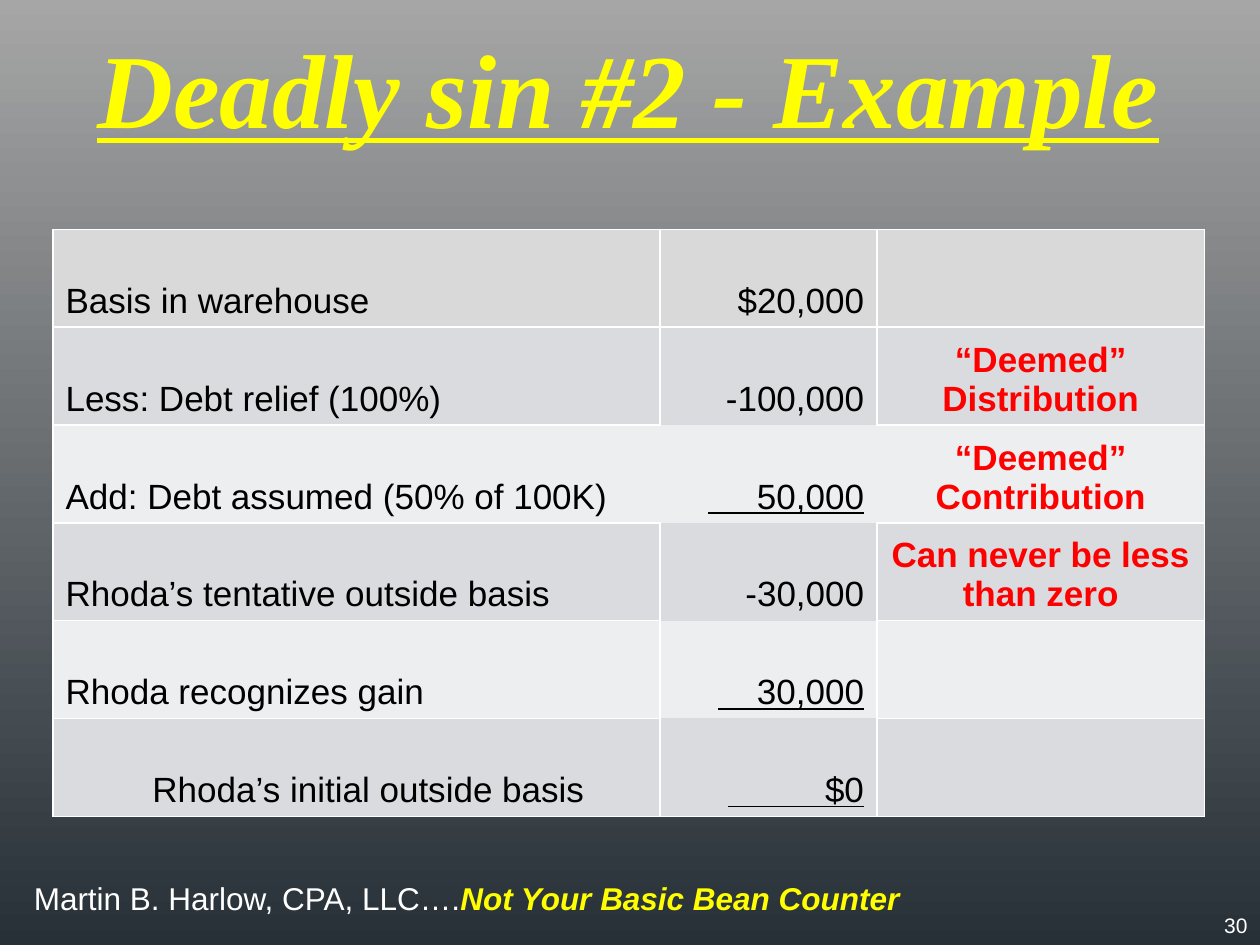
from lxml.etree import SubElement
from pptx import Presentation
from pptx.dml.color import RGBColor
from pptx.enum.text import MSO_ANCHOR, PP_ALIGN
from pptx.oxml.ns import qn
from pptx.util import Inches, Pt

WHITE = RGBColor(0xFF, 0xFF, 0xFF)
BLACK = RGBColor(0, 0, 0)
YELLOW = RGBColor(0xFF, 0xFF, 0)
RED = RGBColor(0xFF, 0, 0)
BG_TOP = RGBColor(0xA6, 0xA6, 0xA6)
BG_BOTTOM = RGBColor(0x27, 0x30, 0x37)
FIRST_ROW = RGBColor(0xD9, 0xD9, 0xD9)
BANDS = (RGBColor(0xED, 0xEE, 0xEF), RGBColor(0xD9, 0xDB, 0xDE))

COL_WIDTHS = (4.82, 1.72, 2.6)
ROW_HEIGHT = 4.66 / 6
ALIGNS = (PP_ALIGN.LEFT, PP_ALIGN.RIGHT, PP_ALIGN.CENTER)
AMOUNT_COL = 1
OPEN_ROW = 2  # row without inner vertical lines

# label, amount, remark, width in characters of the ruled amount (0 = not ruled)
ROWS = (
    ("Basis in warehouse", "$20,000", "", 0),
    ("Less: Debt relief (100%)", "-100,000", "“Deemed” Distribution", 0),
    ("Add: Debt assumed (50% of 100K)", "50,000", "“Deemed” Contribution", 11),
    ("Rhoda’s tentative outside basis", "-30,000", "Can never be less than zero", 0),
    ("Rhoda recognizes gain", "30,000", "", 10),
    ("Rhoda’s initial outside basis", "$0", "", 12),
)


def style(font, size, color, name="Arial", bold=False, italic=False, underline=False):
    font.size, font.name = Pt(size), name
    font.color.rgb = color
    font.bold, font.italic, font.underline = bold, italic, underline


def paint_background(s):
    fill = s.background.fill
    fill.gradient()
    fill.gradient_angle = 270
    for stop, color, position in zip(fill.gradient_stops, (BG_TOP, BG_BOTTOM), (0, 1)):
        stop.color.rgb = color
        stop.position = position


def add_title(s, text):
    title = s.shapes.title
    title.left, title.top = Inches(0.4), Inches(0.14)
    title.width, title.height = Inches(9.17), Inches(1.11)
    tf = title.text_frame
    tf.text = text
    tf.vertical_anchor = MSO_ANCHOR.TOP
    p = tf.paragraphs[0]
    p.alignment = PP_ALIGN.CENTER
    style(p.font, 60, YELLOW, "Times New Roman", bold=True, italic=True, underline=True)


def add_text_box(s, left, top, width, height):
    """Return the paragraph of a new wrapping text box."""
    tf = s.shapes.add_textbox(*map(Inches, (left, top, width, height))).text_frame
    tf.word_wrap = True
    return tf.paragraphs[0]


def add_footer(s):
    p = add_text_box(s, 0.17, 6.93, 7.59, 0.4)
    for text, color, strong in (("Martin B. Harlow, CPA, LLC….", WHITE, False),
                                ("Not Your Basic Bean Counter", YELLOW, True)):
        r = p.add_run()
        r.text = text
        style(r.font, 18, color, bold=strong, italic=strong)


def add_page_number(s, number):
    p = add_text_box(s, 8.97, 7.19, 1.03, 0.33)
    p.text = number
    p.alignment = PP_ALIGN.RIGHT
    style(p.font, 12, WHITE)


def visible_sides(row, col):
    """Amounts below the first row are open upwards and downwards."""
    sides = set("LRTB")
    if col == AMOUNT_COL and row > 0:
        if row > 1:
            sides.discard("T")
        if row < len(ROWS) - 1:
            sides.discard("B")
    if row == OPEN_ROW:
        if col >= AMOUNT_COL:
            sides.discard("L")
        if col <= AMOUNT_COL:
            sides.discard("R")
    return sides


def set_borders(cell, sides):
    """Call before the cell is filled: lines precede the fill in tcPr."""
    tcPr = cell._tc.get_or_add_tcPr()
    for side in "LRTB":
        ln = SubElement(tcPr, qn(f"a:ln{side}"), w=str(Pt(1)))
        if side in sides:
            fill = SubElement(ln, qn("a:solidFill"))
            SubElement(fill, qn("a:srgbClr"), val=str(WHITE))
        else:
            SubElement(ln, qn("a:noFill"))


def add_basis_table(s):
    table = s.shapes.add_table(
        len(ROWS), len(COL_WIDTHS), Inches(0.42), Inches(1.82),
        Inches(sum(COL_WIDTHS)), Inches(ROW_HEIGHT * len(ROWS))).table
    table.first_row = table.horz_banding = False
    for column, width in zip(table.columns, COL_WIDTHS):
        column.width = Inches(width)
    for i, (label, amount, remark, rule_width) in enumerate(ROWS):
        table.rows[i].height = Inches(ROW_HEIGHT)
        # the padding carries the visible rule to the left of the amount
        for j, text in enumerate((label, amount.rjust(rule_width), remark)):
            cell = table.cell(i, j)
            set_borders(cell, visible_sides(i, j))
            cell.fill.solid()
            cell.fill.fore_color.rgb = BANDS[i % 2] if i else FIRST_ROW
            cell.vertical_anchor = MSO_ANCHOR.BOTTOM
            if not text:
                continue
            cell.text = text
            p = cell.text_frame.paragraphs[0]
            p.alignment = ALIGNS[j]
            is_remark = j > AMOUNT_COL
            style(p.font, 20, RED if is_remark else BLACK, bold=is_remark,
                  underline=j == AMOUNT_COL and rule_width > 0)
    # the result line is indented
    result = table.cell(len(ROWS) - 1, 0)
    result.margin_left = Inches(0.79)


def main():
    prs = Presentation()
    prs.slide_width, prs.slide_height = Inches(10), Inches(7.5)
    s = prs.slides.add_slide(prs.slide_layouts[5])
    paint_background(s)
    add_footer(s)
    add_page_number(s, "30")
    add_basis_table(s)
    add_title(s, "Deadly sin #2 - Example")
    prs.save("out.pptx")


if __name__ == "__main__":
    main()
